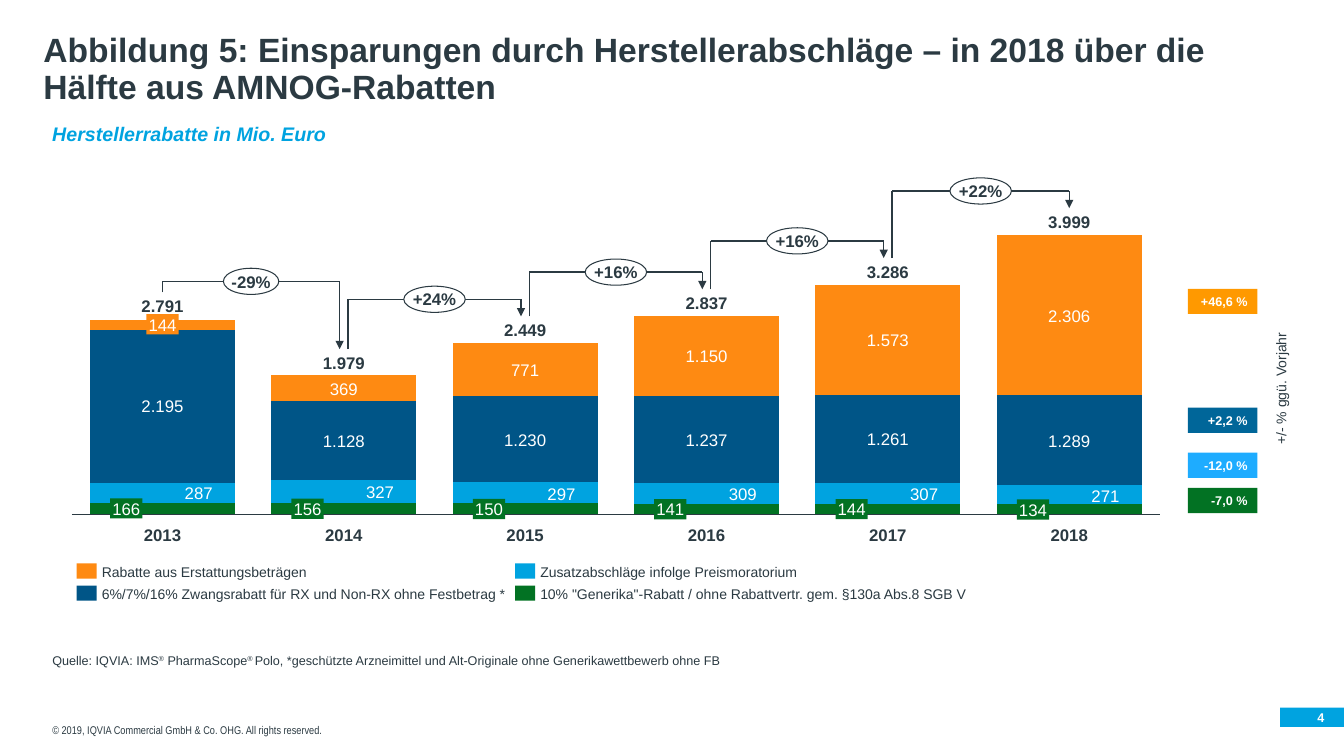
"""Build the slide on manufacturer rebates 2013 to 2018."""
from dataclasses import dataclass

from lxml.etree import SubElement
from pptx import Presentation
from pptx.chart.data import CategoryChartData
from pptx.dml.color import RGBColor
from pptx.enum.chart import XL_CHART_TYPE, XL_TICK_LABEL_POSITION, XL_TICK_MARK
from pptx.enum.shapes import MSO_CONNECTOR, MSO_SHAPE
from pptx.enum.text import MSO_ANCHOR, PP_ALIGN
from pptx.oxml import parse_xml
from pptx.oxml.ns import nsdecls, qn
from pptx.util import Inches, Pt


@dataclass(frozen=True)
class Theme:
    ink: str = "2B3A42"
    white: str = "FFFFFF"
    green: str = "027223"
    sky: str = "00A3E0"
    navy: str = "005587"
    orange: str = "FE8A12"
    font: str = "Arial"
    narrow: str = "Arial Narrow"
    title: int = 24
    subtitle: int = 14
    label: int = 12
    legend: int = 10
    small: int = 9
    tiny: int = 8


THEME = Theme()
TITLE = "Abbildung 5: Einsparungen durch Herstellerabschläge – in 2018 über die Hälfte aus AMNOG-Rabatten"
SUBTITLE = "Herstellerrabatte in Mio. Euro"
YEARS = ["2013", "2014", "2015", "2016", "2017", "2018"]
TOTALS = [2791, 1979, 2449, 2837, 3286, 3999]
SERIES = [
    ('10% "Generika"-Rabatt / ohne Rabattvertr. gem. §130a Abs.8 SGB V', THEME.green, [166, 156, 150, 141, 144, 134]),
    ("Zusatzabschläge infolge Preismoratorium", THEME.sky, [287, 327, 297, 309, 307, 271]),
    ("6%/7%/16% Zwangsrabatt für RX und Non-RX ohne Festbetrag\u00a0*", THEME.navy,
     [2195, 1128, 1230, 1237, 1261, 1289]),
    ("Rabatte aus Erstattungsbeträgen", THEME.orange, [144, 369, 771, 1150, 1573, 2306]),
]
CHANGES = ["-29%", "+24%", "+16%", "+16%", "+22%"]
BADGES = [("+46,6 %", "FF9900", 34.38), ("+2,2 %", "006699", 48.54),
          ("-12,0 %", "1EACFF", 53.88), ("-7,0 %", THEME.green, 58.08)]
SOURCE = [("Quelle: IQVIA: IMS", 0), ("®", 30), (" PharmaScope", 0), ("® ", 30),
          ("Polo, *geschützte Arzneimittel und Alt-Originale ohne Generikawettbewerb ohne FB", 0)]
COPYRIGHT = "© 2019, IQVIA Commercial GmbH & Co. OHG. All rights reserved."

COLUMNS, ROWS = 160, 90
CHART = (7.5, 26.88, 131.64, 35.4)
PLOT = {"x": 0.008, "y": 0.031, "w": 0.984, "h": 0.939}
PEAK = max(SERIES[-1][2])
STACKS = list(zip(*(values for _, _, values in SERIES)))
TALLEST = max(map(sum, STACKS))
BASELINE = CHART[1] + CHART[3] * (PLOT["y"] + PLOT["h"])
PLOT_LEFT, PITCH = CHART[0] + CHART[2] * PLOT["x"], CHART[2] * PLOT["w"] / len(YEARS)
CENTERS = [PLOT_LEFT + PITCH * (index + 0.5) for index in range(len(YEARS))]

deck = Presentation()
deck.slide_width, deck.slide_height = Inches(13.33), Inches(7.5)
page = deck.slides.add_slide(deck.slide_layouts[6])


def across(cells):
    return round(cells * deck.slide_width / COLUMNS)


def down(cells):
    return round(cells * deck.slide_height / ROWS)


def place(left, top, width, height):
    return across(left), down(top), across(width), down(height)


def around(x, y, width, height):
    return x - width / 2, y - height / 2, width, height


def height_of(value):
    return value / TALLEST * CHART[3] * PLOT["h"]


def percent_of_peak(value):
    return round(value / PEAK * 100)


def thousands(value):
    return f"{value:,}".replace(",", ".")


def write(text, area, size=THEME.label, color=THEME.ink, font=THEME.font, bold=False, italic=False,
          align=PP_ALIGN.LEFT, anchor=MSO_ANCHOR.MIDDLE, padding=(0, 0), wrap=False, spacing=None,
          fill=None, line=None, preset=MSO_SHAPE.RECTANGLE):
    if fill:
        box = page.shapes.add_shape(preset, *place(*area))
        box.shadow.inherit = False
        box.fill.solid()
        box.fill.fore_color.rgb = RGBColor.from_string(fill)
        if line:
            box.line.color.rgb = RGBColor.from_string(line)
            box.line.width = Pt(0.75)
        else:
            box.line.fill.background()
    else:
        box = page.shapes.add_textbox(*place(*area))
    frame = box.text_frame
    frame.word_wrap, frame.vertical_anchor = wrap, anchor
    frame.margin_left = frame.margin_right = Inches(padding[0])
    frame.margin_top = frame.margin_bottom = Inches(padding[1])
    para = frame.paragraphs[0]
    para.alignment, para.line_spacing = align, spacing
    for words, raised in ([(text, 0)] if isinstance(text, str) else text):
        span = para.add_run()
        span.text = words
        span.font.size, span.font.name = Pt(size), font
        span.font.bold, span.font.italic = bold, italic
        span.font.color.rgb = RGBColor.from_string(color)
        if raised:
            span.font._element.set("baseline", str(raised * 1000))
    return box


def block(area, fill):
    return write("", area, fill=fill)


def connect(start, end, arrow=False):
    line = page.shapes.add_connector(MSO_CONNECTOR.STRAIGHT, across(start[0]), down(start[1]),
                                     across(end[0]), down(end[1]))
    line.line.color.rgb = RGBColor.from_string(THEME.ink)
    line.line.width = Pt(1)
    if arrow:
        SubElement(line.line._get_or_add_ln(), qn("a:tailEnd"), type="triangle")
    SubElement(line._element.spPr, qn("a:effectLst"))


def draw_chart():
    data = CategoryChartData()
    data.categories = YEARS
    for name, _, values in SERIES:
        data.add_series(name, [percent_of_peak(value) for value in values])
    chart = page.shapes.add_chart(XL_CHART_TYPE.COLUMN_STACKED, *place(*CHART), data).chart
    chart.has_legend = chart.has_title = False
    chart.font.name, chart.font.size = THEME.font, Pt(THEME.legend)
    chart.font.color.rgb = RGBColor.from_string(THEME.ink)
    plot = chart.plots[0]
    plot.gap_width, plot.overlap, plot.vary_by_categories = 25, 100, False
    for series, (_, color, _) in zip(plot.series, SERIES):
        series.format.fill.solid()
        series.format.fill.fore_color.rgb = RGBColor.from_string(color)
    axis = chart.category_axis
    axis.tick_label_position = XL_TICK_LABEL_POSITION.NONE
    axis.major_tick_mark = axis.minor_tick_mark = XL_TICK_MARK.NONE
    axis.format.line.color.rgb = RGBColor.from_string(THEME.ink)
    axis.format.line.width = Pt(0.75)
    scale = chart.value_axis
    scale.minimum_scale, scale.maximum_scale = 0, percent_of_peak(TALLEST)
    scale.has_major_gridlines = scale.visible = False
    area = chart._chartSpace.chart.plotArea
    for layout in area.findall(qn("c:layout")):
        area.remove(layout)
    modes = '<c:layoutTarget val="inner"/><c:xMode val="edge"/><c:yMode val="edge"/>'
    shares = "".join(f'<c:{key} val="{share}"/>' for key, share in PLOT.items())
    area.insert(0, parse_xml(f'<c:layout {nsdecls("c")}><c:manualLayout>{modes}{shares}</c:manualLayout></c:layout>'))


def draw_labels():
    centered = {"align": PP_ALIGN.CENTER, "padding": (0.02, 0)}
    shifts = {THEME.green: -4.32, THEME.sky: 4.32}
    for year, total, stack, center in zip(YEARS, TOTALS, STACKS, CENTERS):
        floor = BASELINE
        for value, (_, color, _) in zip(stack, SERIES):
            middle = floor - height_of(value) / 2
            floor -= height_of(value)
            tagged = color == THEME.green or height_of(value) < 1.5
            width = 3.84 if value < 1000 else 5.52
            write(thousands(value), around(center + shifts.get(color, 0), middle, width, 2.4),
                  color=THEME.white, fill=color if tagged else None, **centered)
        write(thousands(total), around(center, floor - 1.6, 5.52, 2.4), bold=True, **centered)
        write(year, around(center, 63.72, 6, 2.4), bold=True, align=PP_ALIGN.CENTER)


def draw_changes():
    tips = [BASELINE - height_of(sum(stack)) - 3.2 for stack in STACKS]
    last = len(CHANGES) - 1
    for index, change in enumerate(CHANGES):
        left = CENTERS[index] + (0.5 if index else 0)
        right = CENTERS[index + 1] - (0.5 if index < last else 0)
        level = min(tips[index:index + 2]) - (2.04 if index else 1.32)
        connect((left, tips[index]), (left, level))
        connect((left, level), (right, level))
        connect((right, level), (right, tips[index + 1]), arrow=True)
        write(change, around((left + right) / 2, level, 7.32 if index else 6.6, 3.12), bold=True,
              align=PP_ALIGN.CENTER, fill=THEME.white, line=THEME.ink, preset=MSO_SHAPE.OVAL)


def draw_legend():
    for index, (name, color, _) in enumerate(reversed(SERIES)):
        left = 9.12 if index in (0, 2) else 61.32
        top = 67.08 + 2.64 * (index > 1)
        block((left, top, 2.4, 1.8), color)
        write(name, (left + 3, top - 0.06, 56, 2.04), size=THEME.legend)


def main():
    padded = {"padding": (0.1, 0.05)}
    block((152.4, 84.24, 7.6, 2.28), THEME.sky)
    write("4", (152.4, 84.24, 5.28, 2.28), size=THEME.small, color=THEME.white, bold=True, align=PP_ALIGN.RIGHT)
    write(SUBTITLE, (5.04, 14.26, 148.8, 5.28), size=THEME.subtitle, color=THEME.sky, bold=True, italic=True,
          anchor=MSO_ANCHOR.TOP, spacing=0.9, wrap=True, **padded)
    write(TITLE, (4, 3.1, 148.8, 10.16), size=THEME.title, bold=True, anchor=MSO_ANCHOR.BOTTOM,
          spacing=0.9, wrap=True, **padded)
    draw_chart()
    draw_changes()
    draw_labels()
    SERIES[1], SERIES[2] = SERIES[2], SERIES[1]
    draw_legend()
    write(SOURCE, (5.04, 77.12, 111, 3), size=THEME.small, anchor=MSO_ANCHOR.BOTTOM, wrap=True, **padded)
    for text, color, top in BADGES:
        write(text, (141.42, top, 8.28, 3), size=THEME.small, color=THEME.white, bold=True,
              align=PP_ALIGN.RIGHT, fill=color, wrap=True, **padded)
    write("+/- % ggü. Vorjahr", (144.48, 44.52, 15.96, 3.24), size=THEME.legend, **padded).rotation = 270
    write(COPYRIGHT, (5.04, 83.88, 119.64, 4.44), size=THEME.tiny, font=THEME.narrow,
          anchor=MSO_ANCHOR.BOTTOM, fill=THEME.white, wrap=True, **padded)
    deck.save("out.pptx")


if __name__ == "__main__":
    main()
